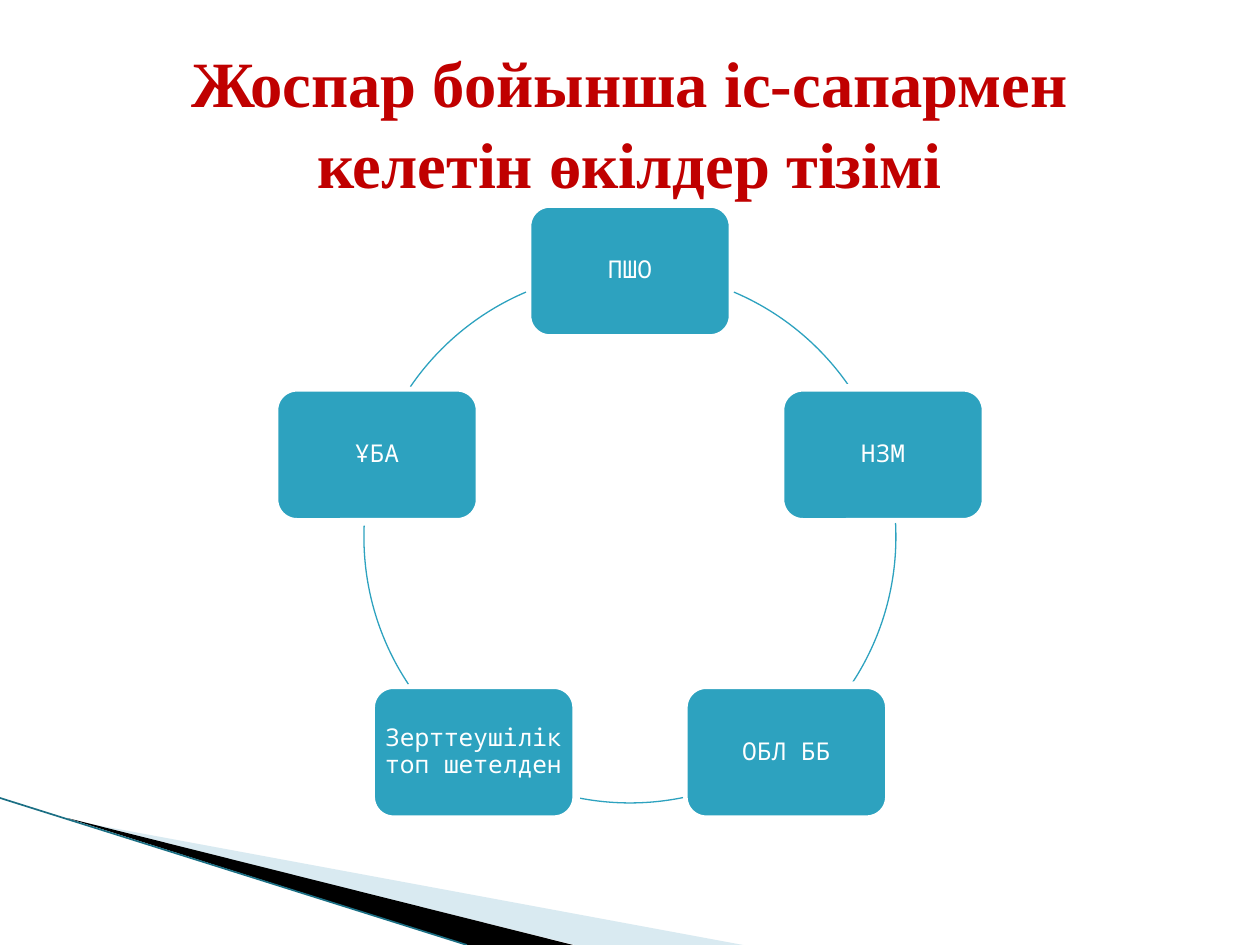
from dataclasses import dataclass
from math import cos, radians, sin

from lxml import etree
from pptx import Presentation
from pptx.dml.color import RGBColor
from pptx.enum.shapes import MSO_CONNECTOR, MSO_SHAPE
from pptx.enum.text import MSO_ANCHOR, PP_ALIGN
from pptx.oxml.ns import qn
from pptx.util import Pt

PX = 914400 / 126
WIDTH, HEIGHT = 1260, 945
ROUNDED, ARC = MSO_SHAPE.ROUNDED_RECTANGLE, MSO_SHAPE.ARC
STRAIGHT = MSO_CONNECTOR.STRAIGHT
MIDDLE, CENTER = MSO_ANCHOR.MIDDLE, PP_ALIGN.CENTER


@dataclass(frozen=True)
class Theme:
    """Colours, fonts and sizes in points."""
    title: RGBColor = RGBColor(0xC0, 0x00, 0x00)
    teal: RGBColor = RGBColor(0x2D, 0xA2, 0xBF)
    edge: RGBColor = RGBColor(0x1B, 0x6F, 0x84)
    pale: RGBColor = RGBColor(0xA0, 0xCB, 0xDC)
    white: RGBColor = RGBColor(0xFF, 0xFF, 0xFF)
    black: RGBColor = RGBColor(0x00, 0x00, 0x00)
    title_font: str = "Times New Roman"
    node_font: str = "Noto Sans Mono"
    title_size: float = 36.9
    node_size: float = 14
    node_line: float = 4.33
    arc_line: float = 0.75
    edge_line: float = 0.95


THEME = Theme()
NODES = ["ПШО", "НЗМ", "ОБЛ ББ", "Зерттеушілік топ шетелден", "ҰБА"]
ARC_SPANS = [(293, 325.6), (357, 33.6), (78.5, 101.5), (146.4, 183), (214.4, 247)]


def px(*values):
    """Turn px lengths into EMU."""
    return [round(v * PX) for v in values]


def write(s, text, font, size, color, spacing, insets, bold=False):
    """Put one centred, wrapped paragraph into a shape."""
    tf = s.text_frame
    tf.word_wrap = True
    tf.vertical_anchor = MIDDLE
    tf.margin_left, tf.margin_top, tf.margin_right, tf.margin_bottom = px(*insets)
    p = tf.paragraphs[0]
    p.alignment = CENTER
    p.line_spacing = spacing
    r = p.add_run()
    r.text = text
    r.font.name, r.font.size, r.font.bold = font, Pt(size), bold
    r.font.color.rgb = color


def add_wedge(sp, points, color, alpha=None):
    """Draw a filled polygon without an outline."""
    builder = sp.build_freeform(*points[0], scale=PX)
    builder.add_line_segments(points[1:], close=True)
    s = builder.convert_to_shape()
    s.shadow.inherit = False
    s.fill.solid()
    s.fill.fore_color.rgb = color
    s.line.fill.background()
    if alpha:
        rgb = s.fill._xPr.find(qn("a:solidFill"))[0]
        etree.SubElement(rgb, qn("a:alpha")).set("val", str(alpha * 1000))


def add_corner(sp, x, y, w, h):
    """Draw the slanted bands in the bottom left corner."""
    add_wedge(sp, [(x + 69, y + 22), (x + w, y + h), (x + 575, y + h)], THEME.pale, 40)
    add_wedge(sp, [(x + 67, y + 20), (x + 573, y + h), (x + 467, y + h)], THEME.black)
    s = sp.add_connector(STRAIGHT, *px(x, y, x + 467, y + h))
    s.line.color.rgb = THEME.edge
    s.line.width = Pt(THEME.edge_line)
    etree.SubElement(s._element.spPr, qn("a:effectLst"))


def add_title(sp, x, y, w, h):
    """Write the slide title."""
    s = sp.add_textbox(*px(x, y, w, h))
    write(s, "Жоспар бойынша іс-сапармен келетін өкілдер тізімі", THEME.title_font,
          THEME.title_size, THEME.title, 1.05, (13, 14, 13, 6), True)


def add_node(sp, x, y, w, h, text):
    """Draw one rounded box with its label."""
    s = sp.add_shape(ROUNDED, *px(x, y, w, h))
    s.shadow.inherit = False
    s.fill.solid()
    s.fill.fore_color.rgb = THEME.teal
    s.line.color.rgb = THEME.white
    s.line.width = Pt(THEME.node_line)
    write(s, text, THEME.node_font, THEME.node_size, THEME.white, 0.9, (7, 7, 7, 7))


def add_arc(sp, x, y, size, start, end):
    """Draw part of the circle between two clockwise angles in degrees."""
    s = sp.add_shape(ARC, *px(x, y, size, size))
    s.shadow.inherit = False
    s.adjustments[0], s.adjustments[1] = start * 0.6, end * 0.6
    s.fill.background()
    s.line.color.rgb = THEME.teal
    s.line.width = Pt(THEME.arc_line)


def add_cycle(sp, x, y, size, node_w=205, node_h=134):
    """Space the nodes evenly round a circle and join them with arcs."""
    radius = size / 2
    for i, (text, span) in enumerate(zip(NODES, ARC_SPANS)):
        angle = radians(i * 360 / len(NODES) - 90)
        cx = x + radius * (1 + cos(angle))
        cy = y + radius * (1 + sin(angle))
        add_node(sp, cx - node_w / 2, cy - node_h / 2, node_w, node_h, text)
        add_arc(sp, x, y, size, *span)


def main():
    """Build and save the slide."""
    prs = Presentation()
    prs.slide_width, prs.slide_height = px(WIDTH, HEIGHT)
    sp = prs.slides.add_slide(prs.slide_layouts[6]).shapes
    add_corner(sp, 0, 798, 743, 147)
    add_title(sp, 63, 38, 1134, 157)
    add_cycle(sp, 364, 271, 532)
    prs.save("out.pptx")


if __name__ == "__main__":
    main()
